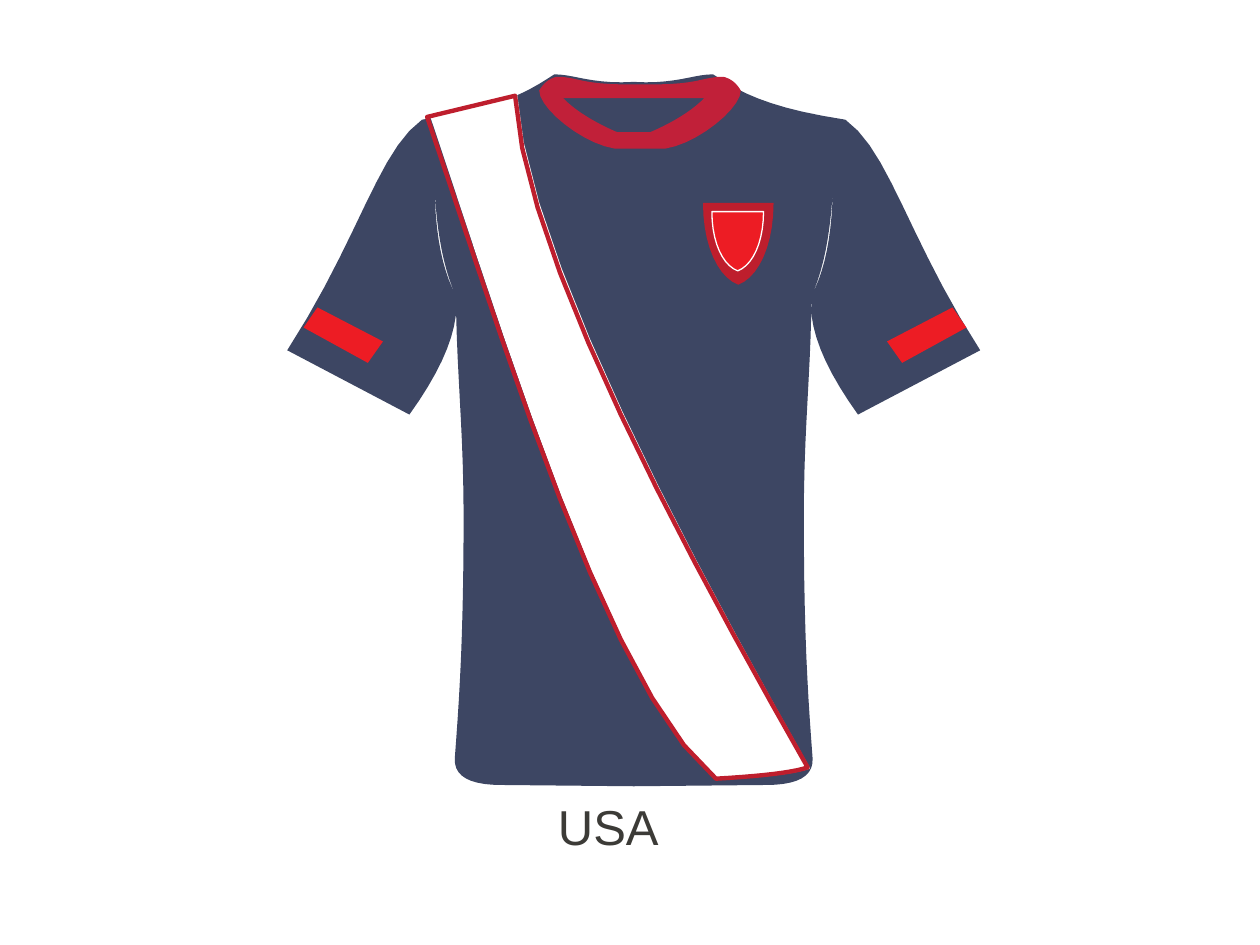
from math import comb

from pptx import Presentation
from pptx import util as u
from pptx.dml.color import RGBColor
from pptx.enum import text

COLORS = {
    "navy": "3D4663", "white": "FFFFFF", "crimson": "BE1E2D",
    "collar": "C12039", "red": "ED1C24", "caption": "3C3B37",
}
CURVE_STEPS = 10

# Vertical mirror lines, in inches
SHIRT_AXIS, COLLAR_AXIS, CUFF_AXIS, SHIELD_AXIS = 5.03, 5.08, 5.04, 5.86

# Each edge lists its Bezier points after the end of the edge before it:
# one point is a straight line, two are a quadratic curve, three a cubic.
# The left half runs from the middle of the neck to the middle of the hem.
HALF_SHIRT = {
    "start": [(SHIRT_AXIS, 0.65)],
    "neckline": [(4.7, 0.67), (4.56, 0.59), (4.4, 0.59)],
    "shoulder": [(4.2, 0.72), (4, 0.85), (3.35, 0.95)],
    "sleeve": [(3, 1.2), (2.85, 1.9), (2.28, 2.78)],
    "sleeve end": [(3.25, 3.29)],
    "underarm": [(3.66, 2.72), (3.62, 2.35)],
    "armhole up": [(3.48, 2.05), (3.45, 1.51)],
    "armhole down": [(3.46, 2.05), (3.62, 2.35)],
    "chest": [(3.62, 2.9), (3.68, 3.4), (3.68, 4.1)],
    "waist": [(3.68, 5), (3.65, 5.5), (3.61, 6.02)],
    "hem corner": [(3.6, 6.23), (3.98, 6.23)],
    "hem": [(SHIRT_AXIS, 6.24)],
}
SASH = {
    "start": [(3.4, 0.88)],
    "lower edge": [(4, 2.65), (4.85, 5.5), (5.7, 6.19)],
    "hip end": [(6.25, 6.16), (6.43, 6.1)],
    "upper edge": [(5.5, 4.45), (4.17, 2), (4.1, 0.71)],
}
HALF_COLLAR = {
    "start": [(COLLAR_AXIS, 0.67)],
    "back": [(4.6, 0.68), (4.6, 0.61), (4.42, 0.61)],
    "corner": [(4.33, 0.63), (4.28, 0.72)],
    "front": [(4.28, 0.86), (4.62, 1.14), (4.88, 1.18)],
    "middle": [(COLLAR_AXIS, 1.18)],
}
HALF_NECK_HOLE = {
    "start": [(SHIRT_AXIS, 0.78)],
    "back": [(4.47, 0.78)],
    "front": [(4.62, 0.93), (4.9, 1.05)],
    "middle": [(SHIRT_AXIS, 1.05)],
}
HALF_SHIELD = {
    "start": [(SHIELD_AXIS, 1.61)],
    "top": [(5.58, 1.61)],
    "side": [(5.58, 1.95), (5.7, 2.2), (SHIELD_AXIS, 2.26)],
}
LEFT_CUFF = [(2.52, 2.44), (3.04, 2.71), (2.92, 2.88), (2.41, 2.6)]

# Left, top, width, height
SASH_TRIM_BOX = (3.39, 0.76, 3.02, 5.42)
INNER_SHIELD_BOX = (5.65, 1.68, 0.41, 0.47)
CAPTION_BOX = (4.33, 6.27, 1, 0.57)


def rgb(name):
    return RGBColor.from_string(COLORS[name])


def bezier(controls, t):
    """Point at share t of the Bezier curve with these control points."""
    degree = len(controls) - 1
    weights = [comb(degree, i) * t**i * (1 - t)**(degree - i)
               for i in range(degree + 1)]
    return tuple(sum(w * value for w, value in zip(weights, axis))
                 for axis in zip(*controls))


def trace(edges):
    """Turn named edges into the points of one running outline."""
    start, *rest = edges.values()
    points = list(start)
    for edge in rest:
        controls = [points[-1], *edge]
        steps = 1 if len(edge) == 1 else CURVE_STEPS
        points += [bezier(controls, i / steps) for i in range(1, steps + 1)]
    return points


def mirror(points, axis):
    return [(2 * axis - x, y) for x, y in points]


def symmetric(half_edges, axis):
    """Close a traced left half with its reflection."""
    half = trace(half_edges)
    return half + mirror(half[::-1], axis)


def fit(points, box):
    """Scale an outline so that it fills the box."""
    xs, ys = zip(*points)
    left, top, width, height = box
    x_scale = width / (max(xs) - min(xs))
    y_scale = height / (max(ys) - min(ys))
    return [(left + (x - min(xs)) * x_scale, top + (y - min(ys)) * y_scale)
            for x, y in points]


def add_outline(page, contours, fill=None, line=None, weight=0):
    """Draw closed contours as one shape; a contour inside another is a hole."""
    first, *others = [[(u.Inches(x), u.Inches(y)) for x, y in contour]
                      for contour in contours]
    builder = page.shapes.build_freeform(*first[0])
    builder.add_line_segments(first[1:], close=True)
    for contour in others:
        builder.move_to(*contour[0])
        builder.add_line_segments(contour[1:], close=True)
    shape = builder.convert_to_shape()
    shape.shadow.inherit = False
    if fill:
        shape.fill.solid()
        shape.fill.fore_color.rgb = rgb(fill)
    else:
        shape.fill.background()
    if line:
        shape.line.color.rgb = rgb(line)
        shape.line.width = u.Pt(weight)
    else:
        shape.line.fill.background()


def add_caption(page, caption):
    box = page.shapes.add_textbox(*map(u.Inches, CAPTION_BOX))
    frame = box.text_frame
    frame.text = caption
    frame.word_wrap = False
    frame.auto_size = text.MSO_AUTO_SIZE.SHAPE_TO_FIT_TEXT
    font = frame.paragraphs[0].runs[0].font
    font.name = "Arial"
    font.size = u.Pt(28)
    font.color.rgb = rgb("caption")


def main():
    deck = Presentation()
    deck.slide_width, deck.slide_height = u.Inches(10), u.Inches(7.5)
    page = deck.slides.add_slide(deck.slide_layouts[6])

    shirt = symmetric(HALF_SHIRT, SHIRT_AXIS)
    sash = trace(SASH)
    collar = symmetric(HALF_COLLAR, COLLAR_AXIS)
    neck_hole = symmetric(HALF_NECK_HOLE, SHIRT_AXIS)
    shield = symmetric(HALF_SHIELD, SHIELD_AXIS)

    add_outline(page, [shirt], "navy")
    add_outline(page, [sash], "white")
    add_outline(page, [fit(sash, SASH_TRIM_BOX)], line="crimson", weight=2.5)
    add_outline(page, [collar, neck_hole], "collar")
    for cuff in (LEFT_CUFF, mirror(LEFT_CUFF, CUFF_AXIS)):
        add_outline(page, [cuff], "red")
    add_caption(page, "USA")
    add_outline(page, [shield], "crimson")
    add_outline(page, [fit(shield, INNER_SHIELD_BOX)], "red", "white", 0.75)

    deck.save("out.pptx")


if __name__ == "__main__":
    main()
